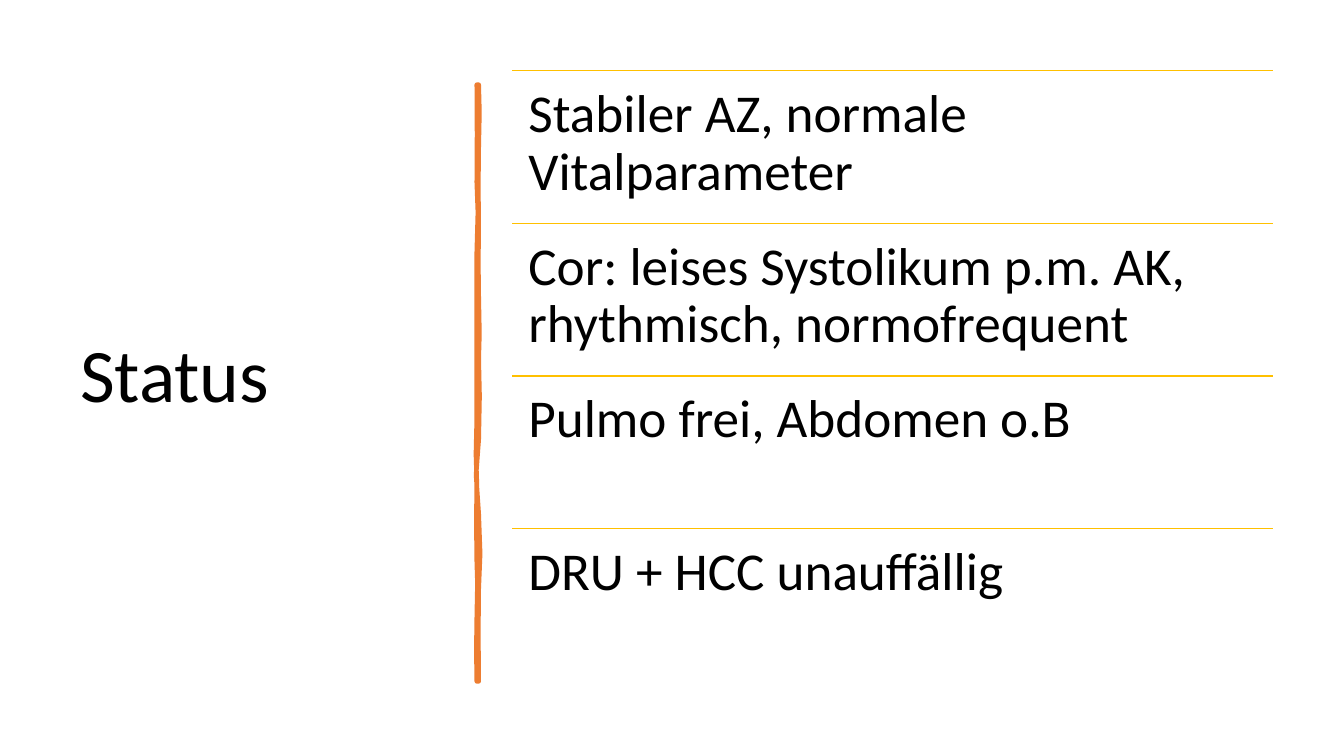
from pptx import Presentation
from pptx.dml.color import RGBColor
from pptx.enum.shapes import MSO_CONNECTOR
from pptx.enum.text import MSO_ANCHOR, MSO_AUTO_SIZE, PP_ALIGN
from pptx.oxml.ns import qn
from pptx.util import Pt
from lxml.etree import SubElement

TITLE = "Status"
ITEMS = [
    "Stabiler AZ, normale Vitalparameter",
    "Cor: leises Systolikum p.m. AK, rhythmisch, normofrequent",
    "Pulmo frei, Abdomen o.B",
    "DRU + HCC unauffällig",
]
FONT = "Calibri"
BLACK, ORANGE, GOLD = "000000", "ED7D31", "FFC000"

LEFT, TOP, WIDTH, STEP, INSET = 366, 50.55, 543.5, 109, 11.4

BAR = [
    (342, 60.5), (342.5, 80.4), (342, 105.1), (341.7, 132.9),
    (342, 162.7), (341.7, 186.9), (342, 211.7), (342.5, 238.6),
    (342, 256.3), (342.6, 283), (342, 313.9), (340.1, 339.2),
    (342, 367.2), (343, 395.5), (342, 420.5), (341.7, 451.8),
    (342, 486.7), (340.6, 486.7), (340.3, 464.3), (340.6, 441.4),
    (341.1, 416.6), (340.6, 401), (340.3, 373.6), (340.6, 343.4),
    (340, 324.4), (340.6, 298.8), (340.6, 272.4), (340.6, 241.2),
    (340.6, 209), (340.6, 180), (341.4, 151.7), (340.6, 130.3),
    (340.8, 96), (340.6, 60.5),
]


def color(code):
    return RGBColor.from_string(code)


def write(frame, text, size, anchor):
    frame.word_wrap = True
    frame.auto_size = MSO_AUTO_SIZE.NONE
    frame.vertical_anchor = anchor
    para = frame.paragraphs[0]
    para.alignment = PP_ALIGN.LEFT
    para.line_spacing = 0.9
    run = para.add_run()
    run.text = text
    run.font.name = FONT
    run.font.size = Pt(size)
    run.font.color.rgb = color(BLACK)


def draw_bar(slide):
    spots = [(Pt(x), Pt(y)) for x, y in BAR]
    pen = slide.shapes.build_freeform(*spots[0])
    pen.add_line_segments(spots[1:], close=True)
    bar = pen.convert_to_shape()
    bar.shadow.inherit = False
    bar.fill.solid()
    bar.fill.fore_color.rgb = color(ORANGE)
    bar.line.color.rgb = color(ORANGE)
    bar.line.width = Pt(3.25)


def draw_row(slide, text, top):
    rule = slide.shapes.add_connector(
        MSO_CONNECTOR.STRAIGHT, Pt(LEFT), Pt(top), Pt(LEFT + WIDTH), Pt(top))
    rule.line.color.rgb = color(GOLD)
    rule.line.width = Pt(1)
    SubElement(rule._element.spPr, qn("a:effectLst"))
    box = slide.shapes.add_textbox(Pt(LEFT), Pt(top), Pt(WIDTH), Pt(STEP))
    frame = box.text_frame
    frame.margin_left = frame.margin_right = Pt(INSET)
    frame.margin_top = frame.margin_bottom = Pt(INSET)
    write(frame, text, 38, MSO_ANCHOR.TOP)


def main():
    deck = Presentation()
    deck.slide_width, deck.slide_height = Pt(960), Pt(540)
    slide = deck.slides.add_slide(deck.slide_layouts[5])
    title = slide.shapes.title
    title.left, title.top = Pt(50), Pt(50)
    title.width, title.height = Pt(269), Pt(440)
    write(title.text_frame, TITLE, 54, MSO_ANCHOR.MIDDLE)
    draw_bar(slide)
    for row, text in enumerate(ITEMS):
        draw_row(slide, text, TOP + row * STEP)
    deck.save("out.pptx")


if __name__ == "__main__":
    main()
